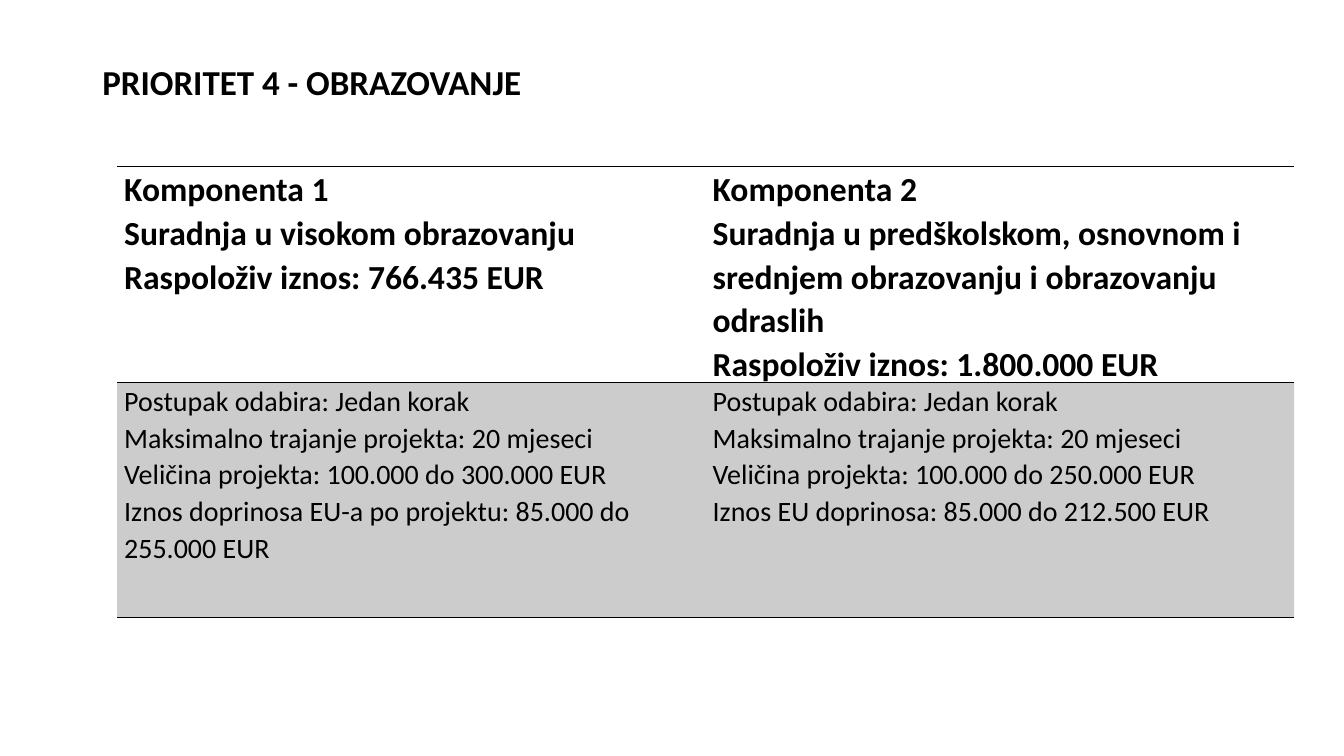
from lxml.etree import SubElement
from pptx import Presentation
from pptx.dml.color import RGBColor
from pptx.enum.text import MSO_ANCHOR
from pptx.oxml import parse_xml
from pptx.oxml.ns import nsdecls, qn
from pptx.util import Cm, Pt

COLORS = {"ink": "000000", "paper": "FFFFFF"}
FONT = "Calibri"
SHADE_OPACITY = 20
ROW_HEIGHTS = (4.37, 5.92)
HEADINGS = (
    ("Komponenta 1",
     "Suradnja u visokom obrazovanju",
     "Raspoloživ iznos: 766.435 EUR"),
    ("Komponenta 2",
     "Suradnja u predškolskom, osnovnom i srednjem obrazovanju i obrazovanju odraslih",
     "Raspoloživ iznos: 1.800.000 EUR"),
)
DETAILS = (
    ("Postupak odabira: Jedan korak",
     "Maksimalno trajanje projekta: 20 mjeseci",
     "Veličina projekta: 100.000 do 300.000 EUR",
     "Iznos doprinosa EU-a po projektu: 85.000 do",
     "255.000 EUR"),
    ("Postupak odabira: Jedan korak",
     "Maksimalno trajanje projekta: 20 mjeseci",
     "Veličina projekta: 100.000 do 250.000 EUR",
     "Iznos EU doprinosa: 85.000 do 212.500 EUR"),
)


def write_lines(text_frame, lines, size, bold, line_spacing):
    text_frame.text = "\n".join(lines)
    for paragraph in text_frame.paragraphs:
        paragraph.line_spacing = line_spacing
        for run in paragraph.runs:
            run.font.name = FONT
            run.font.size = Pt(size)
            run.font.bold = bold
            run.font.color.rgb = RGBColor.from_string(COLORS["ink"])


def rule_cell(cell):
    """Draw lines above and below the cell and none at its sides."""
    properties = cell._tc.get_or_add_tcPr()
    for index, side in enumerate(("lnL", "lnR", "lnT", "lnB")):
        if side in ("lnT", "lnB"):
            paint = f'<a:solidFill><a:srgbClr val="{COLORS["ink"]}"/></a:solidFill>'
        else:
            paint = "<a:noFill/>"
        border = parse_xml(f'<a:{side} {nsdecls("a")} w="{Pt(1)}">{paint}</a:{side}>')
        properties.insert(index, border)


def shade_cell(cell):
    cell.fill.solid()
    cell.fill.fore_color.rgb = RGBColor.from_string(COLORS["ink"])
    color = cell._tc.tcPr.find(qn("a:solidFill")).find(qn("a:srgbClr"))
    SubElement(color, qn("a:alpha"), val=str(SHADE_OPACITY * 1000))


def add_title(slide, left, top, width, height):
    text_frame = slide.shapes.add_textbox(left, top, width, height).text_frame
    text_frame.word_wrap = True
    text_frame.vertical_anchor = MSO_ANCHOR.MIDDLE
    write_lines(text_frame, ["PRIORITET 4 - OBRAZOVANJE"], 25, True, 0.9)


def add_component_table(slide, left, top, width, height):
    frame = slide.shapes.add_table(2, 2, left, top, width, height)
    table = frame.table
    table.first_row = False
    table.horz_banding = False
    for row, row_height in zip(table.rows, ROW_HEIGHTS):
        row.height = Cm(row_height)
    frame.height = height
    for row_index, (texts, size) in enumerate(((HEADINGS, 24), (DETAILS, 20))):
        is_heading = row_index == 0
        for column_index, lines in enumerate(texts):
            cell = table.cell(row_index, column_index)
            cell.margin_left = cell.margin_right = Cm(0.18)
            cell.margin_top = cell.margin_bottom = 0
            cell.vertical_anchor = MSO_ANCHOR.TOP
            write_lines(cell.text_frame, lines, size, is_heading, 1.07)
            if is_heading:
                cell.fill.background()
            else:
                shade_cell(cell)
            rule_cell(cell)


def main():
    presentation = Presentation()
    presentation.slide_width = Cm(33.87)
    presentation.slide_height = Cm(19.05)
    slide = presentation.slides.add_slide(presentation.slide_layouts[6])
    slide.background.fill.solid()
    slide.background.fill.fore_color.rgb = RGBColor.from_string(COLORS["paper"])
    add_title(slide, Cm(2.33), Cm(1.02), Cm(20.6), Cm(2.18))
    add_component_table(slide, Cm(2.95), Cm(4.2), Cm(29.66), Cm(11.33))
    presentation.save("out.pptx")


if __name__ == "__main__":
    main()
